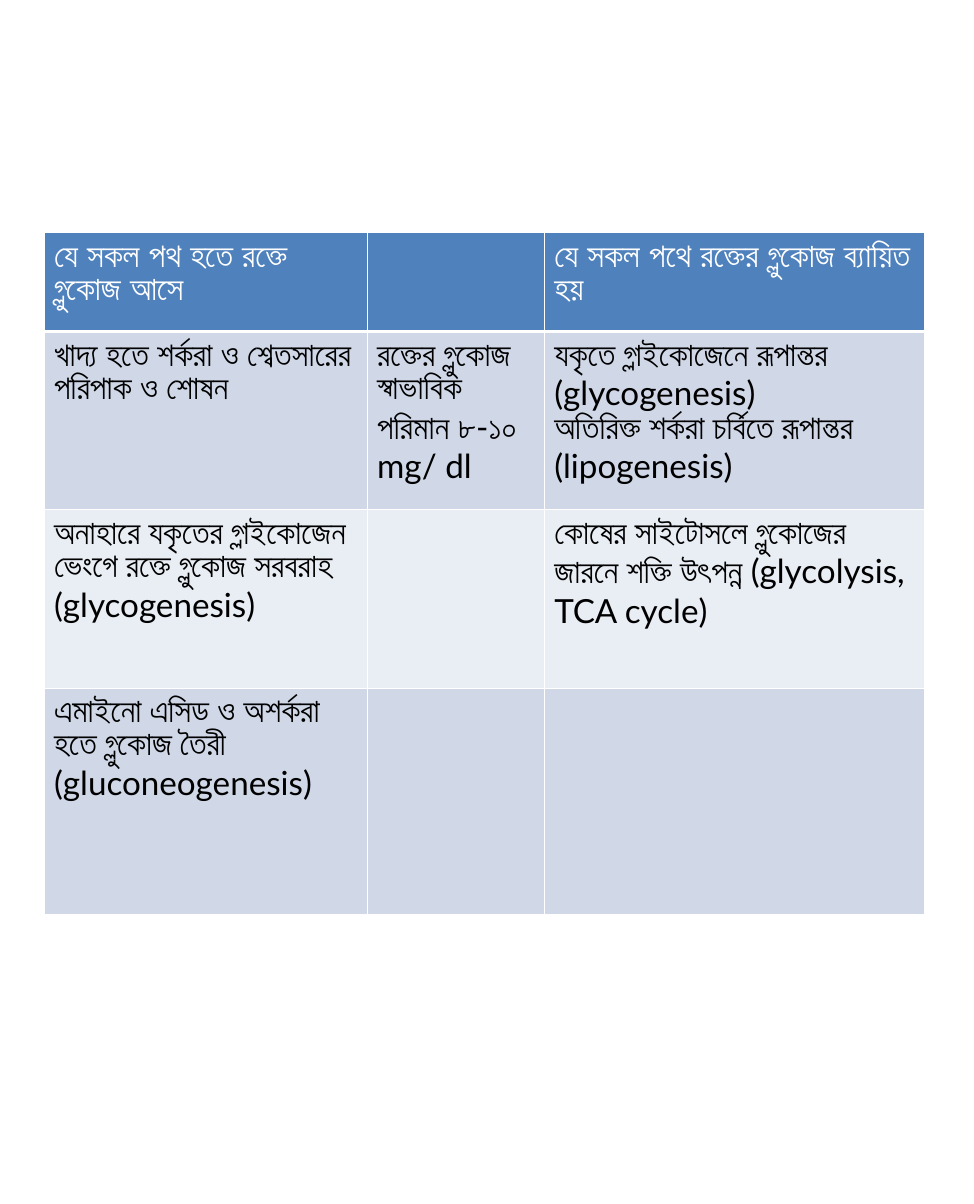
import dataclasses
import pptx
import pptx.util
import pptx.dml.color
import lxml.etree
from pptx.oxml.ns import qn

Cm = pptx.util.Cm
Pt = pptx.util.Pt
RGB = pptx.dml.color.RGBColor

WHITE = RGB(0xFF, 0xFF, 0xFF)
BLACK = RGB(0x00, 0x00, 0x00)
BLUE = RGB(0x4F, 0x81, 0xBD)
PALE = RGB(0xD0, 0xD8, 0xE8)
LIGHT = RGB(0xE9, 0xED, 0xF4)

COLS = (9.27, 5.08, 10.9)
EDGES = ("lnL", "lnR", "lnT", "lnB")
INSET = {
    "margin_left": Cm(0.28),
    "margin_right": Cm(0.28),
    "margin_top": Cm(0.23),
    "margin_bottom": Cm(0.23),
}


@dataclasses.dataclass(frozen=True)
class Row:
    high: float
    fill: RGB
    texts: tuple[str, str, str]
    ink: RGB = BLACK
    bold: bool = False
    top: float = 1
    base: float = 1


ROWS = (
    Row(2.84, BLUE,
        ("যে সকল পথ হতে রক্তে গ্লুকোজ আসে", "",
         "যে সকল পথে রক্তের গ্লুকোজ ব্যায়িত হয়"),
        ink=WHITE, bold=True, base=3),
    Row(5.11, PALE,
        ("খাদ্য হতে শর্করা ও শ্বেতসারের পরিপাক ও শোষন",
         "রক্তের গ্লুকোজ স্বাভাবিক পরিমান ৮-১০ mg/ dl",
         "যকৃতে গ্লাইকোজেনে রূপান্তর (glycogenesis)\n"
         "অতিরিক্ত শর্করা চর্বিতে রূপান্তর (lipogenesis)"),
        top=3),
    Row(5.11, LIGHT,
        ("অনাহারে যকৃতের গ্লাইকোজেন ভেংগে রক্তে গ্লুকোজ সরবরাহ (glycogenesis)", "",
         "কোষের সাইটোসলে গ্লুকোজের জারনে শক্তি উৎপন্ন (glycolysis, TCA cycle)")),
    Row(6.5, PALE,
        ("এমাইনো এসিড ও অশর্করা হতে গ্লুকোজ তৈরী (gluconeogenesis)", "", "")),
)


def set_all(item: object, form: dict) -> None:
    for key, value in form.items():
        setattr(item, key, value)


def add_edges(cell: object, row: Row) -> None:
    props = cell._tc.get_or_add_tcPr()
    for edge, width in zip(EDGES, (1, 1, row.top, row.base)):
        line = lxml.etree.SubElement(props, qn(f"a:{edge}"), w=str(Pt(width)))
        fill = lxml.etree.SubElement(line, qn("a:solidFill"))
        lxml.etree.SubElement(fill, qn("a:srgbClr"), val=str(WHITE))


def fill_cell(cell: object, row: Row, text: str) -> None:
    set_all(cell, INSET)
    add_edges(cell, row)
    cell.fill.solid()
    cell.fill.fore_color.rgb = row.fill
    if not text:
        return
    cell.text = text
    for para in cell.text_frame.paragraphs:
        for run in para.runs:
            set_all(run.font, {"name": "Lato", "size": Pt(27), "bold": row.bold})
            run.font.color.rgb = row.ink


def add_grid(slide: object) -> None:
    high = sum(row.high for row in ROWS)
    grid = slide.shapes.add_table(
        len(ROWS), len(COLS), Cm(1.27), Cm(6.68), Cm(sum(COLS)), Cm(high)
    ).table
    for col, width in zip(grid.columns, COLS):
        col.width = Cm(width)
    for i, row in enumerate(ROWS):
        grid.rows[i].height = Cm(row.high)
        for j, text in enumerate(row.texts):
            fill_cell(grid.cell(i, j), row, text)


def main() -> None:
    deck = pptx.Presentation()
    set_all(deck, {"slide_width": Cm(27.94), "slide_height": Cm(34.54)})
    add_grid(deck.slides.add_slide(deck.slide_layouts[6]))
    deck.save("out.pptx")


if __name__ == "__main__":
    main()
